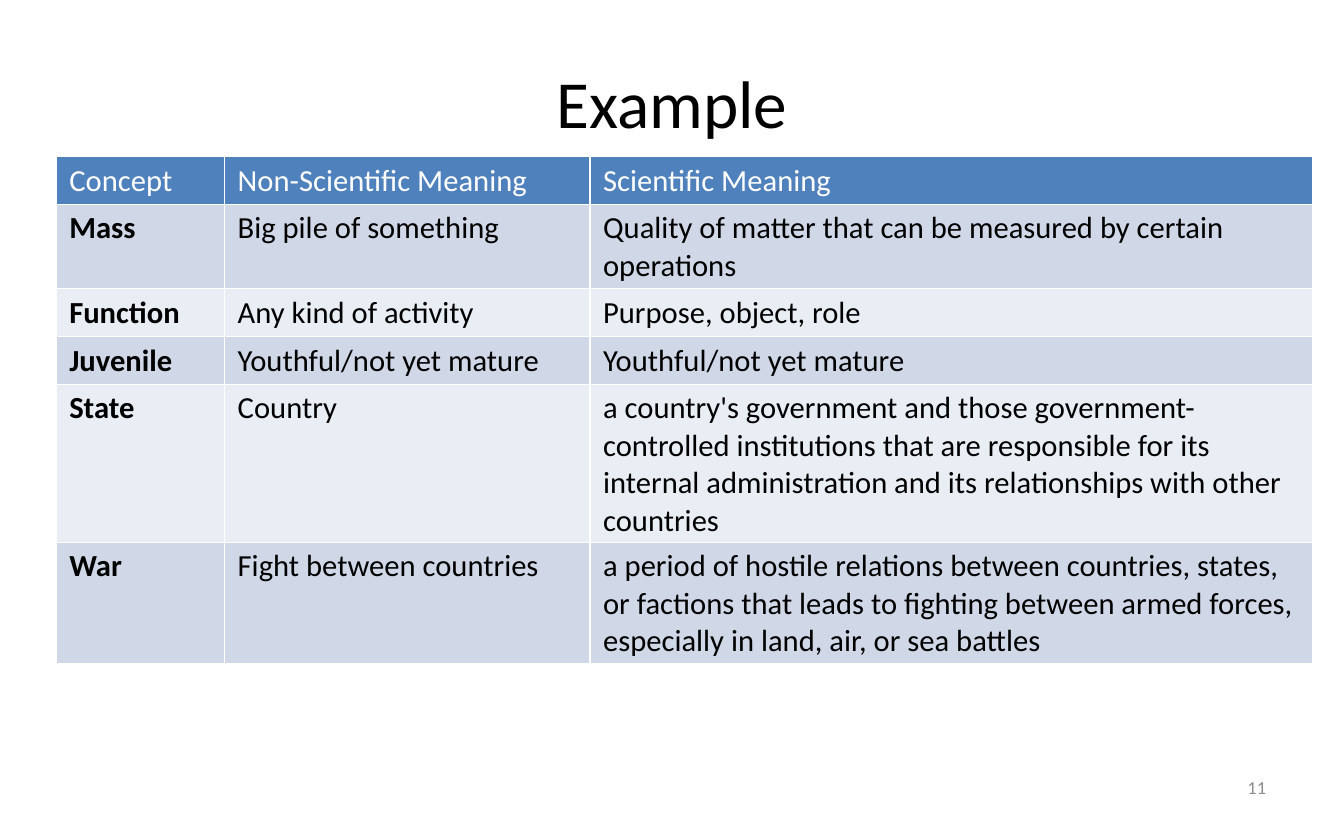
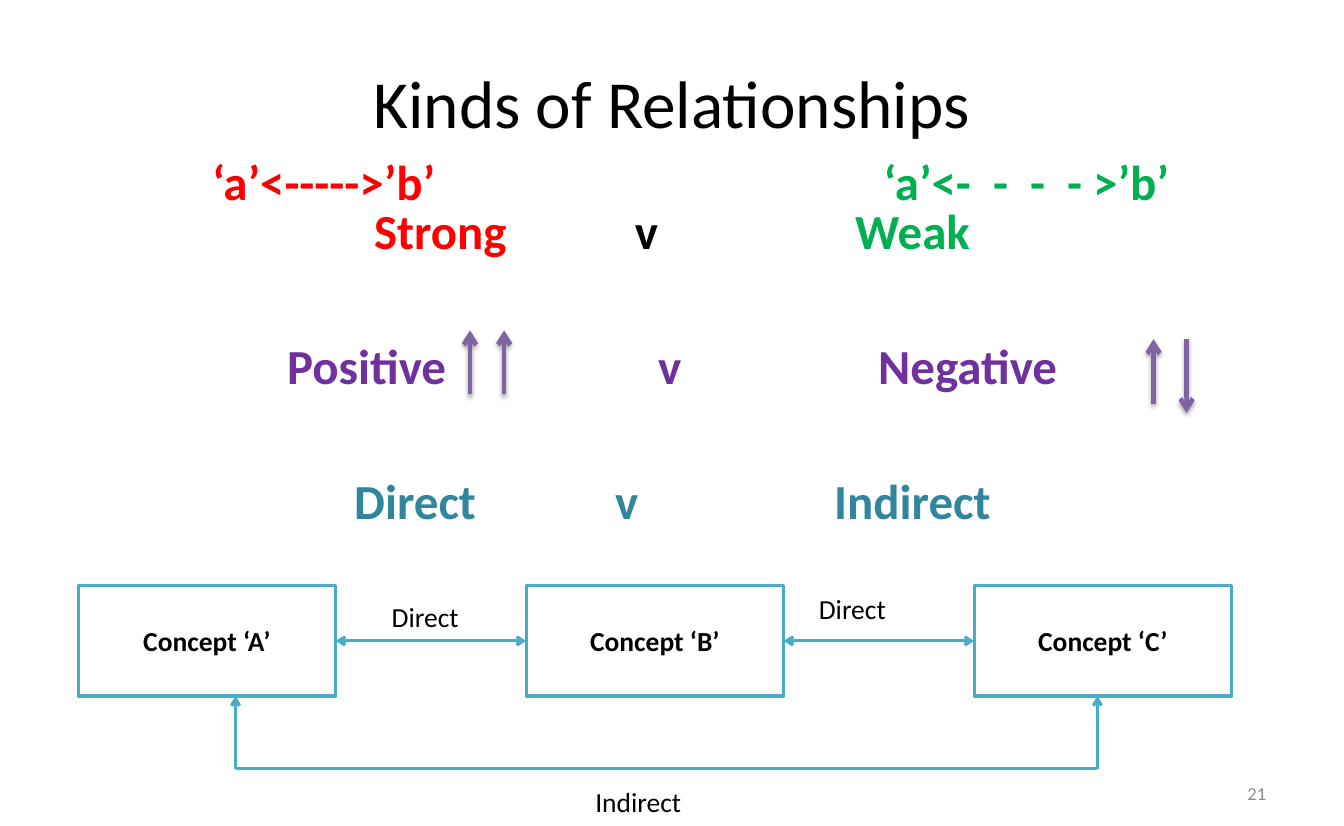
from lxml.etree import SubElement
from pptx import Presentation
from pptx.dml.color import RGBColor
from pptx.enum.shapes import MSO_CONNECTOR as Connector, MSO_SHAPE as Preset
from pptx.enum.text import MSO_ANCHOR as Anchor, MSO_AUTO_SIZE as AutoSize, PP_ALIGN as Align
from pptx.oxml.ns import qn
from pptx.util import Inches, Pt

FONT = "Calibri"
BLACK, WHITE, GREY = "000000", "FFFFFF", "8C8C8C"
RED, GREEN, PURPLE, TEAL = "FF0000", "00B050", "7030A0", "31859C"
HEADER_FILL, BAND_FILLS = "4F81BD", ("D0D8E8", "E9EDF4")
DIAGRAM_LINE, TREND_LINE = "4BACC6", "8064A2"

COLUMN_WIDTHS = (1.53, 3.32, 6.57)
ROW_HEIGHT = 0.41
MEANINGS = [
    ("Concept", "Non-Scientific Meaning", "Scientific Meaning"),
    ("Mass", "Big pile of something",
     "Quality of matter that can be measured by certain operations"),
    ("Function", "Any kind of activity", "Purpose, object, role"),
    ("Juvenile", "Youthful/not yet mature", "Youthful/not yet mature"),
    ("State", "Country",
     "a country's government and those government-controlled institutions that are "
     "responsible for its internal administration and its relationships with other countries"),
    ("War", "Fight between countries",
     "a period of hostile relations between countries, states, or factions that leads to "
     "fighting between armed forces, especially in land, air, or sea battles"),
]

COMPARISON_LEFT, TEXT_INSET = 0.61, 0.1
COMPARISONS = [
    [("Strong", RED, 3.4), ("v", BLACK, 5.77), ("Weak", GREEN, 7.77)],
    [("Positive", PURPLE, 2.61), ("v", PURPLE, 5.98), ("Negative", PURPLE, 7.98)],
    [("Direct", TEAL, 3.22), ("v", TEAL, 5.59), ("Indirect", TEAL, 7.58)],
]
STRENGTH_SYMBOLS = [
    ("‘a’<-  -  -  - >’b’", (7.93, 1.33, 3.76, 0.64), GREEN),
    ("‘a’<----->’b’", (1.83, 1.33, 2.25, 0.64), RED),
]
TREND_ARROWS = [(4.27, 3.58, 3), (4.58, 3.58, 3), (10.48, 3.67, 3.08), (10.78, 3.08, 3.75)]

CONCEPTS = ["Concept ‘A’", "Concept ‘B’", "Concept ‘C’"]
BOX_LEFT, BOX_TOP, BOX_WIDTH, BOX_HEIGHT, BOX_PITCH = 0.71, 5.32, 2.34, 1, 4.07
INDIRECT_ENDS, INDIRECT_Y = (2.14, 9.97), 6.98
LINK_LABELS = [
    ("Direct", (3.46, 5.4, 0.82, 0.4)),
    ("Direct", (7.34, 5.33, 0.82, 0.4)),
    ("Indirect", (5.31, 7.08, 0.99, 0.4)),
]


def color(value):
    return RGBColor.from_string(value)


def inches(lengths):
    return [Inches(length) for length in lengths]


def style_font(font, size, value, bold=False):
    font.name, font.size, font.bold = FONT, Pt(size), bold
    font.color.rgb = color(value)


def fill_text(frame, text, size, value, bold=False, align=Align.LEFT):
    frame.text = text
    paragraph = frame.paragraphs[0]
    paragraph.alignment = align
    style_font(paragraph.runs[0].font, size, value, bold)


def add_text(slide, text, place, size, value, bold=False, align=Align.LEFT,
             anchor=Anchor.TOP, wrap=True):
    box = slide.shapes.add_textbox(*inches(place))
    frame = box.text_frame
    frame.word_wrap, frame.vertical_anchor = wrap, anchor
    fill_text(frame, text, size, value, bold, align)
    return box


def add_titled_slide(presentation, title, number, number_top):
    slide = presentation.slides.add_slide(presentation.slide_layouts[5])
    shape = slide.shapes.title
    shape.left, shape.top, shape.width, shape.height = inches((0.61, 0.3, 10.99, 1.25))
    shape.text_frame.vertical_anchor = Anchor.MIDDLE
    fill_text(shape.text_frame, title, 44, BLACK, align=Align.CENTER)
    add_text(slide, number, (8.75, number_top, 2.85, 0.4), 12, GREY,
             align=Align.RIGHT, anchor=Anchor.MIDDLE)
    return slide


def border_cell(cell):
    properties = cell._tc.get_or_add_tcPr()
    for index, side in enumerate(("lnL", "lnR", "lnT", "lnB")):
        line = SubElement(properties, qn(f"a:{side}"), w=str(Pt(1)))
        fill = SubElement(line, qn("a:solidFill"))
        SubElement(fill, qn("a:srgbClr"), val=WHITE)
        properties.insert(index, line)


def add_meanings_table(slide):
    row_count = len(MEANINGS)
    place = inches((0.51, 1.42, sum(COLUMN_WIDTHS), ROW_HEIGHT * row_count))
    table = slide.shapes.add_table(row_count, len(COLUMN_WIDTHS), *place).table
    for column, width in zip(table.columns, COLUMN_WIDTHS):
        column.width = Inches(width)
    for row_index, texts in enumerate(MEANINGS):
        table.rows[row_index].height = Inches(ROW_HEIGHT)
        header = row_index == 0
        for column_index, text in enumerate(texts):
            cell = table.cell(row_index, column_index)
            cell.margin_left = cell.margin_right = Inches(0.12)
            cell.margin_top = cell.margin_bottom = Inches(0.05)
            cell.fill.solid()
            cell.fill.fore_color.rgb = color(HEADER_FILL if header else BAND_FILLS[(row_index - 1) % 2])
            fill_text(cell.text_frame, text, 20, WHITE if header else BLACK,
                      bold=not header and column_index == 0)
            border_cell(cell)


def add_line(slide, start, end, value, width, head=False, tail=False, shadow=False):
    connector = slide.shapes.add_connector(Connector.STRAIGHT, *inches(start + end))
    connector.line.color.rgb = color(value)
    connector.line.width = Pt(width)
    line = connector.line._get_or_add_ln()
    for shown, name in ((head, "headEnd"), (tail, "tailEnd")):
        if shown:
            SubElement(line, qn(f"a:{name}"), type="arrow")
    effects = SubElement(connector._element.spPr, qn("a:effectLst"))
    if shadow:
        outer = SubElement(effects, qn("a:outerShdw"), blurRad=str(Pt(3.1)),
                           dist=str(Pt(1.8)), dir="5400000", rotWithShape="0")
        shade = SubElement(outer, qn("a:srgbClr"), val=BLACK)
        SubElement(shade, qn("a:alpha"), val="35000")


def add_comparisons(slide):
    box = slide.shapes.add_textbox(*inches((COMPARISON_LEFT, 1.77, 10.99, 3.4)))
    frame = box.text_frame
    frame.word_wrap = True
    for index, words in enumerate(COMPARISONS):
        paragraph = frame.add_paragraph() if index else frame.paragraphs[0]
        if index:
            paragraph.space_before = Pt(50)
        tabs = SubElement(paragraph._p.get_or_add_pPr(), qn("a:tabLst"))
        for text, value, left in words:
            stop = Inches(left - COMPARISON_LEFT - TEXT_INSET)
            SubElement(tabs, qn("a:tab"), pos=str(stop), algn="l")
            run = paragraph.add_run()
            run.text = "\t" + text
            style_font(run.font, 32, value, bold=True)


def add_concept_diagram(slide):
    middle, bottom = BOX_TOP + BOX_HEIGHT / 2, BOX_TOP + BOX_HEIGHT
    for index, concept in enumerate(CONCEPTS):
        left = BOX_LEFT + index * BOX_PITCH
        box = slide.shapes.add_shape(Preset.RECTANGLE, *inches((left, BOX_TOP, BOX_WIDTH, BOX_HEIGHT)))
        box.shadow.inherit = False
        box.fill.solid()
        box.fill.fore_color.rgb = color(WHITE)
        box.line.color.rgb = color(DIAGRAM_LINE)
        box.line.width = Pt(2)
        box.text_frame.vertical_anchor = Anchor.MIDDLE
        fill_text(box.text_frame, concept, 18, BLACK, bold=True, align=Align.CENTER)
        if index:
            add_line(slide, (left - BOX_PITCH + BOX_WIDTH, middle), (left, middle),
                     DIAGRAM_LINE, 2, head=True, tail=True)
    first, last = INDIRECT_ENDS
    add_line(slide, (first, INDIRECT_Y), (last, INDIRECT_Y), DIAGRAM_LINE, 2)
    for x in INDIRECT_ENDS:
        add_line(slide, (x, INDIRECT_Y), (x, bottom), DIAGRAM_LINE, 2, tail=True)
    for text, place in LINK_LABELS:
        label = add_text(slide, text, place, 18, BLACK, wrap=False)
        label.text_frame.auto_size = AutoSize.SHAPE_TO_FIT_TEXT
        label.fill.solid()
        label.fill.fore_color.rgb = color(WHITE)


def main():
    presentation = Presentation()
    presentation.slide_width, presentation.slide_height = inches((12.21, 7.5))

    example = add_titled_slide(presentation, "Example", "11", 6.95)
    add_meanings_table(example)

    relationships = add_titled_slide(presentation, "Kinds of Relationships", "21", 7)
    add_comparisons(relationships)
    for text, place, value in STRENGTH_SYMBOLS:
        add_text(relationships, text, place, 32, value, bold=True)
    for x, start, end in TREND_ARROWS:
        add_line(relationships, (x, start), (x, end), TREND_LINE, 3, tail=True, shadow=True)
    add_concept_diagram(relationships)

    presentation.save("out.pptx")


if __name__ == "__main__":
    main()
